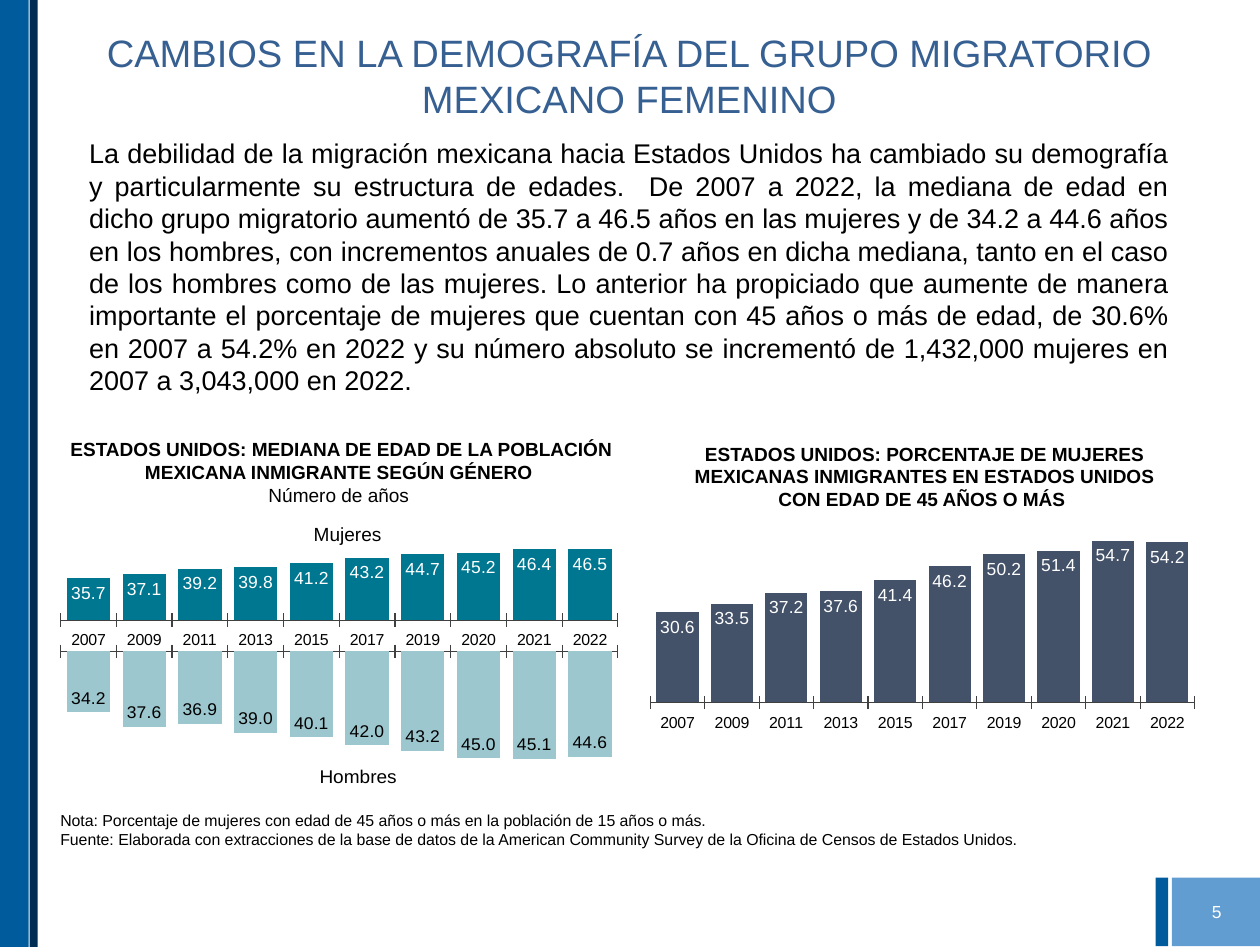
from dataclasses import dataclass

from lxml import etree
from pptx import Presentation
from pptx.chart.data import CategoryChartData
from pptx.dml.color import RGBColor
from pptx.enum.chart import XL_CHART_TYPE, XL_LABEL_POSITION, XL_TICK_LABEL_POSITION, XL_TICK_MARK
from pptx.enum.shapes import MSO_SHAPE
from pptx.enum.text import MSO_ANCHOR, MSO_AUTO_SIZE, PP_ALIGN
from pptx.oxml.ns import qn
from pptx.util import Cm, Pt

COLUMNS = XL_CHART_TYPE.COLUMN_CLUSTERED
INSIDE_END = XL_LABEL_POSITION.INSIDE_END
NO_LABELS = XL_TICK_LABEL_POSITION.NONE
CROSS, NO_TICK = XL_TICK_MARK.CROSS, XL_TICK_MARK.NONE
RECT = MSO_SHAPE.RECTANGLE
TOP, MIDDLE = MSO_ANCHOR.TOP, MSO_ANCHOR.MIDDLE
NO_FIT = MSO_AUTO_SIZE.NONE
LEFT, CENTER, JUSTIFY = PP_ALIGN.LEFT, PP_ALIGN.CENTER, PP_ALIGN.JUSTIFY

YEARS = ["2007", "2009", "2011", "2013", "2015", "2017", "2019", "2020", "2021", "2022"]
POSITIONS = [str(i) for i in range(1, len(YEARS) + 1)]
WOMEN_MEDIAN = [35.7, 37.1, 39.2, 39.8, 41.2, 43.2, 44.7, 45.2, 46.4, 46.5]
MEN_MEDIAN = [34.2, 37.6, 36.9, 39.0, 40.1, 42.0, 43.2, 45.0, 45.1, 44.6]
WOMEN_OVER_45 = [30.6, 33.5, 37.2, 37.6, 41.4, 46.2, 50.2, 51.4, 54.7, 54.2]

BODY = (
    "La debilidad de la migración mexicana hacia Estados Unidos ha cambiado su demografía y "
    "particularmente su estructura de edades.  De 2007 a 2022, la mediana de edad en dicho grupo "
    "migratorio aumentó de 35.7 a 46.5 años en las mujeres y de 34.2 a 44.6 años en los hombres, "
    "con incrementos anuales de 0.7 años en dicha mediana, tanto en el caso de los hombres como de "
    "las mujeres. Lo anterior ha propiciado que aumente de manera importante el porcentaje de "
    "mujeres que cuentan con 45 años o más de edad, de 30.6% en 2007 a 54.2% en 2022 y su número "
    "absoluto se incrementó de 1,432,000 mujeres en 2007 a 3,043,000 en 2022."
)


@dataclass(frozen=True)
class Theme:
    font: str = "Arial"
    title: str = "376092"
    text: str = "000000"
    white: str = "FFFFFF"
    axis: str = "404040"
    blue: str = "005B9D"
    navy: str = "012D55"
    sky: str = "629DD1"
    women: str = "007790"
    men: str = "9CC7CE"
    over_45: str = "435169"
    title_size: int = 24
    body_size: int = 17
    heading_size: int = 12
    label_size: int = 11
    small_size: int = 10


def set_layout(parent, index, **places):
    """Give a chart part a manual layout, as fractions of the chart's size."""
    for old in parent.findall(qn("c:layout")):
        parent.remove(old)
    layout = etree.Element(qn("c:layout"))
    manual = etree.SubElement(layout, qn("c:manualLayout"))
    if "w" in places:
        etree.SubElement(manual, qn("c:layoutTarget")).set("val", "inner")
    for key in ("xMode", "yMode"):
        etree.SubElement(manual, qn(f"c:{key}")).set("val", "edge")
    for key, value in places.items():
        etree.SubElement(manual, qn(f"c:{key}")).set("val", str(value))
    parent.insert(index, layout)


class Deck:
    def __init__(self, theme, width, height):
        self.theme = theme
        self.prs = Presentation()
        self.prs.slide_width, self.prs.slide_height = Cm(width), Cm(height)
        self.s = None

    def add_slide(self):
        self.s = self.prs.slides.add_slide(self.prs.slide_layouts[5])

    def style(self, font, size, color=None, bold=False):
        font.name, font.size, font.bold = self.theme.font, Pt(size), bold
        font.color.rgb = RGBColor.from_string(color or self.theme.text)

    def band(self, box, color):
        sp = self.s.shapes.add_shape(RECT, *map(Cm, box))
        sp.shadow.inherit = False
        sp.fill.solid()
        sp.fill.fore_color.rgb = RGBColor.from_string(color)
        sp.line.fill.background()

    def title(self, box, text):
        sp = self.s.shapes.title
        sp.left, sp.top, sp.width, sp.height = map(Cm, box)
        self.fill_text(sp.text_frame, [text], self.theme.title_size, self.theme.title, CENTER, MIDDLE)

    def text(self, box, lines, size, color=None, align=LEFT, anchor=MIDDLE, bold_lines=0):
        sp = self.s.shapes.add_textbox(*map(Cm, box))
        self.fill_text(sp.text_frame, lines, size, color, align, anchor, bold_lines)

    def fill_text(self, tf, lines, size, color, align, anchor, bold_lines=0):
        tf.text = "\n".join(lines)
        tf.word_wrap, tf.auto_size, tf.vertical_anchor = True, NO_FIT, anchor
        for i, p in enumerate(tf.paragraphs):
            p.alignment = align
            for r in p.runs:
                self.style(r.font, size, color, i < bold_lines)

    def column_chart(self, box, name, values, color, label_color, plot, categories=YEARS,
                     title_at=None, limits=(0, 60), upside_down=False):
        theme = self.theme
        data = CategoryChartData(number_format="#,##0.0")
        data.categories = categories
        data.add_series(name, values)
        chart = self.s.shapes.add_chart(COLUMNS, *map(Cm, box), data).chart
        self.style(chart.font, theme.small_size)
        chart.has_legend = False
        chart.has_title = title_at is not None
        if title_at:
            tf = chart.chart_title.text_frame
            tf.text = name
            self.style(tf.paragraphs[0].runs[0].font, theme.heading_size)
            set_layout(chart.element.find(".//" + qn("c:title")), 1, **dict(zip("xy", title_at)))
        set_layout(chart.element.find(".//" + qn("c:plotArea")), 0, **dict(zip("xywh", plot)))

        value_axis, years_axis = chart.value_axis, chart.category_axis
        value_axis.minimum_scale, value_axis.maximum_scale = limits
        value_axis.has_major_gridlines = False
        value_axis.reverse_order = upside_down
        value_axis.visible = False
        years_axis.major_tick_mark, years_axis.minor_tick_mark = CROSS, NO_TICK
        years_axis.format.line.color.rgb = RGBColor.from_string(theme.axis)
        years_axis.format.line.width = Pt(0.75)
        self.style(years_axis.tick_labels.font, theme.small_size)
        if upside_down:
            years_axis.tick_label_position = NO_LABELS

        columns = chart.plots[0]
        columns.gap_width, columns.overlap, columns.vary_by_categories = 29, -27, False
        fill = columns.series[0].format.fill
        fill.solid()
        fill.fore_color.rgb = RGBColor.from_string(color)
        columns.has_data_labels = True
        labels = columns.data_labels
        labels.show_value, labels.position = True, INSIDE_END
        labels.number_format, labels.number_format_is_linked = "#,##0.0", False
        self.style(labels.font, theme.label_size, label_color)


def main():
    theme = Theme()
    width, height = 28, 21.05
    deck = Deck(theme, width, height)
    deck.add_slide()

    deck.band((26.04, 19.51, 1.96, 1.52), theme.sky)
    deck.band((25.68, 19.51, 0.28, 1.52), theme.blue)
    deck.band((0.66, 0, 0.18, height), theme.navy)
    deck.band((0, 0, 0.64, height), theme.blue)

    deck.title((1.73, 0.5, 24.51, 2.34),
               "CAMBIOS EN LA DEMOGRAFÍA DEL GRUPO MIGRATORIO MEXICANO FEMENINO")
    deck.text((1.73, 2.92, 24.51, 5.97), [BODY], theme.body_size, align=JUSTIFY, anchor=TOP)
    deck.text((26.19, 19.71, 1.7, 1.12), ["5"], theme.label_size, theme.white, CENTER)

    deck.column_chart((1.09, 11.05, 12.9, 3.51), "Mujeres", WOMEN_MEDIAN, theme.women, theme.white,
                      plot=(0.02, 0.27, 0.96, 0.51), title_at=(0.45, 0.14), limits=(20, 50))
    deck.column_chart((1.09, 14.1, 12.9, 3.51), "Hombres", MEN_MEDIAN, theme.men, theme.text,
                      plot=(0.02, 0.11, 0.96, 0.84), categories=POSITIONS, title_at=(0.46, 0.83),
                      limits=(20, 50), upside_down=True)
    deck.text((1.14, 9.42, 12.9, 2.13),
              ["ESTADOS UNIDOS: MEDIANA DE EDAD DE LA POBLACIÓN MEXICANA INMIGRANTE SEGÚN GÉNERO ",
               "Número de años "], theme.heading_size, align=CENTER, bold_lines=1)

    deck.text((14.81, 9.42, 11.48, 2.34),
              ["ESTADOS UNIDOS: PORCENTAJE DE MUJERES MEXICANAS INMIGRANTES EN ESTADOS UNIDOS "
               "CON EDAD DE 45 AÑOS O MÁS "], theme.heading_size, align=CENTER, bold_lines=1)
    deck.text((1.09, 17.6, 24.82, 1.7),
              ["Nota: Porcentaje de mujeres con edad de 45 años o más en la población de 15 años o más.",
               "Fuente: Elaborada con extracciones de la base de datos de la American Community Survey "
               "de la Oficina de Censos de Estados Unidos."], theme.small_size)
    deck.column_chart((14.2, 11.58, 12.6, 4.75), "Series 1", WOMEN_OVER_45,
                      theme.over_45, theme.white, plot=(0.02, 0.02, 0.96, 0.83))
    deck.prs.save("out.pptx")


if __name__ == "__main__":
    main()
